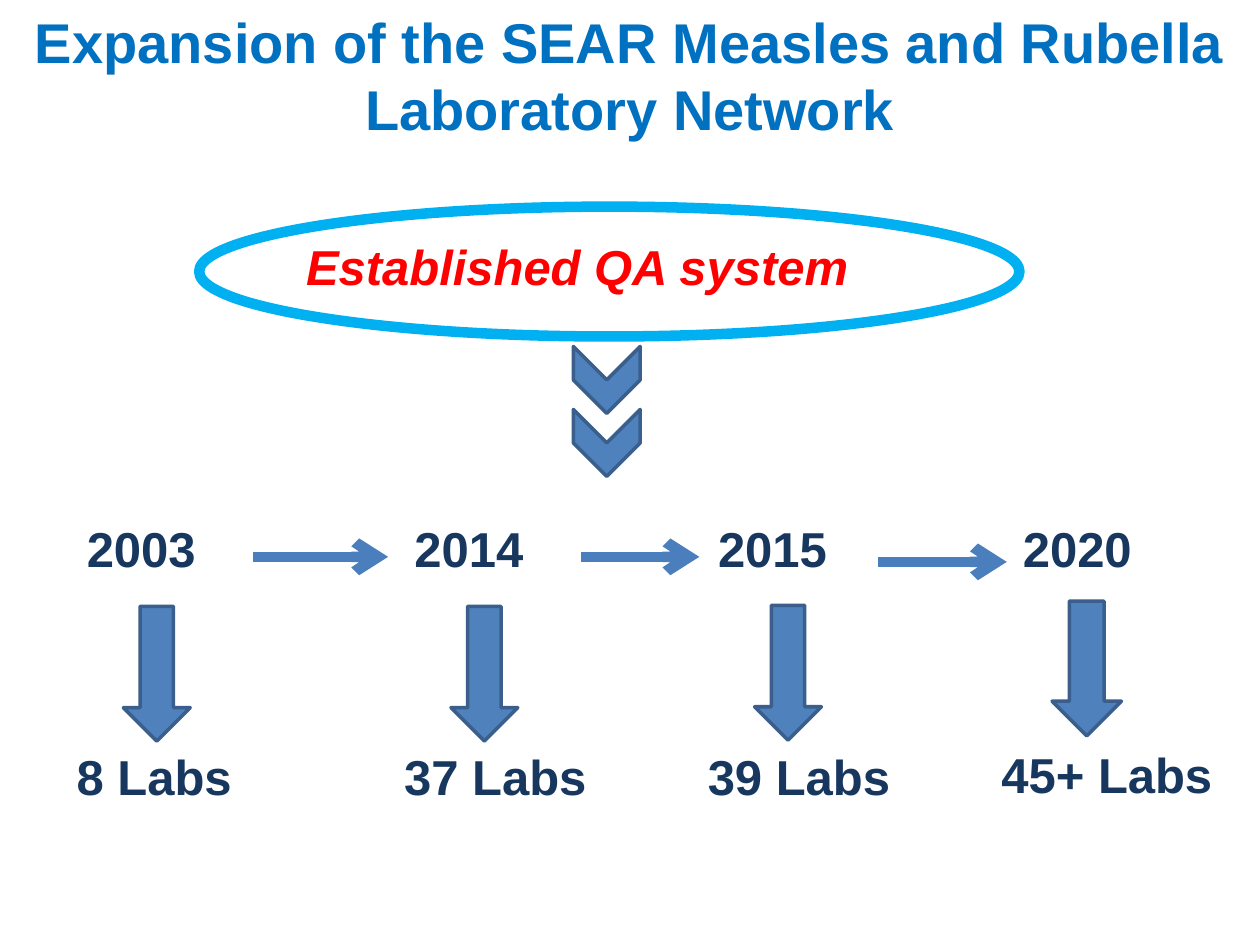
import dataclasses

import lxml.etree
import pptx
import pptx.dml.color
import pptx.enum.shapes
import pptx.enum.text
import pptx.oxml.ns
import pptx.util

Pt = pptx.util.Pt
Shape = pptx.enum.shapes.MSO_SHAPE


def rgb(value: str) -> pptx.dml.color.RGBColor:
    return pptx.dml.color.RGBColor.from_string(value)


@dataclasses.dataclass(frozen=True)
class Theme:
    font: str = "Arial"
    title_size: float = 32
    label_size: float = 28
    title: str = "0070C0"
    label: str = "17375E"
    accent: str = "FF0000"
    ring: str = "00B0F0"
    fill: str = "4F81BD"
    outline: str = "3A5F8C"
    arrow: str = "4B7EBC"
    outline_width: float = 2
    heavy_width: float = 6


@dataclasses.dataclass(frozen=True)
class Box:
    left: float
    top: float
    width: float
    height: float

    def lengths(self) -> tuple:
        return Pt(self.left), Pt(self.top), Pt(self.width), Pt(self.height)


@dataclasses.dataclass(frozen=True)
class Milestone:
    year: str
    labs: str
    left: float
    top: float
    labs_width: float
    arrow_shift: float = 28
    arrow_drop: float = 53.5
    arrow_width: float = 38.2
    labs_shift: float = -5.8
    labs_drop: float = 130.3


@dataclasses.dataclass(frozen=True)
class Step:
    start: float
    end: float
    level: float


THEME = Theme()
LABEL_HEIGHT = 41.2
YEAR_WIDTH = 77.8
DOWN_ARROW_HEIGHT = 77
CHEVRON_SIZE = 38.2

MILESTONES = [
    Milestone("2003", "8 Labs", 42.5, 293, 104.4),
    Milestone("2014", "37 Labs", 229.7, 293, 120.2),
    Milestone("2015", "39 Labs", 403.2, 292.5, 120.2),
    Milestone("2020", "45+ Labs", 577.4, 292.5, 136.8, 23.8, 51, 39.6, -12.2, 129.4),
]
STEPS = [
    Step(144.7, 221.8, 318.2),
    Step(331.9, 399.6, 318.2),
    Step(501.8, 575.3, 321.1),
]


def write(frame, text: str, size: float, color: str, italic: bool = False) -> None:
    para = frame.paragraphs[0]
    span = para.add_run()
    span.text = text
    span.font.name = THEME.font
    span.font.size = Pt(size)
    span.font.bold = True
    if italic:
        span.font.italic = True
    span.font.color.rgb = rgb(color)


def add_title(page, text: str) -> None:
    title = page.shapes.title
    title.left, title.top, title.width, title.height = Box(0, 0.7, 720, 84.8).lengths()
    frame = title.text_frame
    frame.word_wrap = True
    frame.auto_size = pptx.enum.text.MSO_AUTO_SIZE.SHAPE_TO_FIT_TEXT
    frame.vertical_anchor = pptx.enum.text.MSO_ANCHOR.TOP
    frame.paragraphs[0].alignment = pptx.enum.text.PP_ALIGN.CENTER
    frame.paragraphs[0].space_before = Pt(0)
    write(frame, text, THEME.title_size, THEME.title)


def add_label(page, box: Box, text: str, color: str, italic: bool = False) -> None:
    frame = page.shapes.add_textbox(*box.lengths()).text_frame
    frame.word_wrap = False
    frame.auto_size = pptx.enum.text.MSO_AUTO_SIZE.SHAPE_TO_FIT_TEXT
    write(frame, text, THEME.label_size, color, italic)


def add_solid(page, kind, box: Box, rotation: float = 0) -> None:
    solid = page.shapes.add_shape(kind, *box.lengths())
    solid.shadow.inherit = False
    solid.rotation = rotation
    solid.fill.solid()
    solid.fill.fore_color.rgb = rgb(THEME.fill)
    solid.line.color.rgb = rgb(THEME.outline)
    solid.line.width = Pt(THEME.outline_width)


def add_ring(page, box: Box) -> None:
    ring = page.shapes.add_shape(Shape.OVAL, *box.lengths())
    ring.shadow.inherit = False
    ring.fill.background()
    ring.line.color.rgb = rgb(THEME.ring)
    ring.line.width = Pt(THEME.heavy_width)


def add_step(page, step: Step) -> None:
    arrow = page.shapes.add_connector(
        pptx.enum.shapes.MSO_CONNECTOR.STRAIGHT,
        Pt(step.start), Pt(step.level), Pt(step.end), Pt(step.level),
    )
    arrow.line.color.rgb = rgb(THEME.arrow)
    arrow.line.width = Pt(THEME.heavy_width)
    qn = pptx.oxml.ns.qn
    properties = arrow.element.spPr
    line = properties.find(qn("a:ln"))
    lxml.etree.SubElement(line, qn("a:tailEnd"), type="arrow")
    lxml.etree.SubElement(properties, qn("a:effectLst"))


def add_milestone(page, stone: Milestone) -> None:
    year_box = Box(stone.left, stone.top, YEAR_WIDTH, LABEL_HEIGHT)
    arrow_box = Box(stone.left + stone.arrow_shift, stone.top + stone.arrow_drop,
                    stone.arrow_width, DOWN_ARROW_HEIGHT)
    labs_box = Box(stone.left + stone.labs_shift, stone.top + stone.labs_drop,
                   stone.labs_width, LABEL_HEIGHT)
    add_label(page, year_box, stone.year, THEME.label)
    add_solid(page, Shape.DOWN_ARROW, arrow_box)
    add_label(page, labs_box, stone.labs, THEME.label)


def main() -> None:
    deck = pptx.Presentation()
    deck.slide_width, deck.slide_height = Pt(720), Pt(540)
    page = deck.slides.add_slide(deck.slide_layouts.get_by_name("Title Only"))
    add_title(page, "Expansion of the SEAR Measles and Rubella Laboratory Network")
    add_label(page, Box(167.8, 131.8, 328.3, LABEL_HEIGHT),
              "Established QA system", THEME.accent, italic=True)
    add_ring(page, Box(113.8, 118.1, 468.7, 74.2))
    for top in (198, 234):
        add_solid(page, Shape.CHEVRON, Box(327.6, top, CHEVRON_SIZE, CHEVRON_SIZE), 90)
    for stone in MILESTONES:
        add_milestone(page, stone)
    for step in STEPS:
        add_step(page, step)
    deck.save("out.pptx")


if __name__ == "__main__":
    main()
